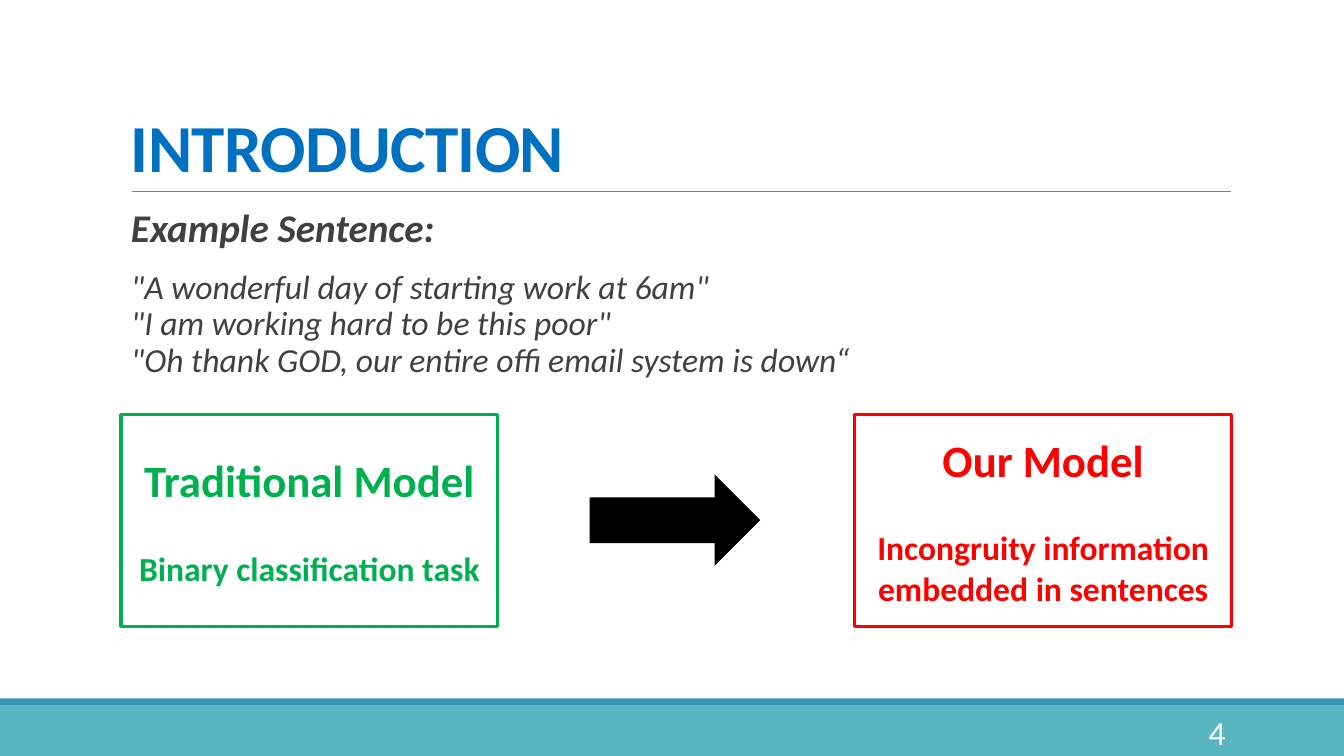
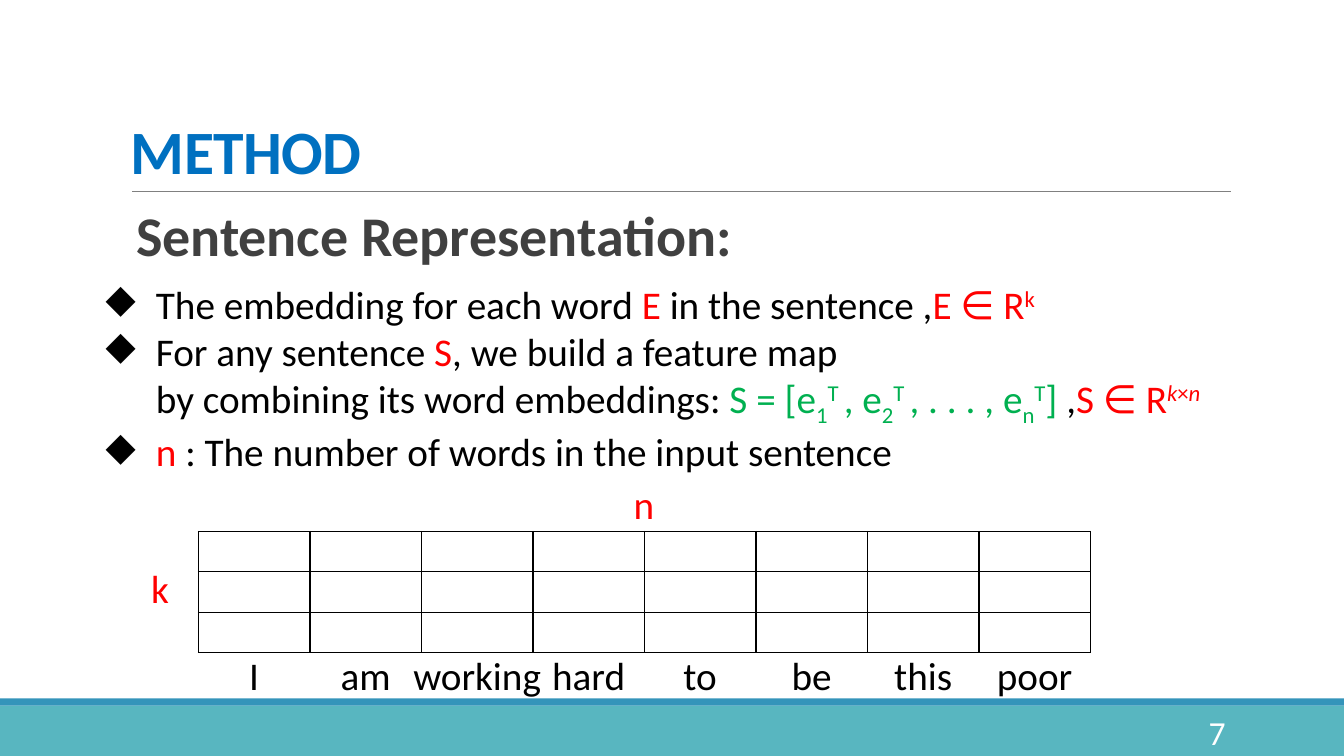
from lxml.etree import SubElement
from pptx import Presentation
from pptx.dml.color import RGBColor
from pptx.enum.shapes import MSO_CONNECTOR, MSO_SHAPE
from pptx.enum.text import MSO_ANCHOR, PP_ALIGN
from pptx.oxml.ns import qn
from pptx.util import Cm, Pt

FONT = "Calibri"
BLACK, WHITE, RED, GREEN = "000000", "FFFFFF", "FF0000", "00B050"
TITLE_BLUE, BODY_GREY, RULE_GREY = "0070C0", "404040", "808080"
TEAL, BAND_BLUE = "58B6C0", "3494BA"
SUB, SUP = -25000, 30000

PAGE_WIDTH, PAGE_HEIGHT = 33.87, 19.05
LEFT, CONTENT_WIDTH = 3.05, 27.94
INSET = 0.25

EXAMPLE_HEADING = "Example Sentence:"
EXAMPLES = (
    '"A wonderful day of starting work at 6am"\n'
    '"I am working hard to be this poor"\n'
    '"Oh thank GOD, our entire offi email system is down“'
)
MODELS = [  # left, colour, name, description
    (3.05, GREEN, "Traditional Model", "Binary classification task"),
    (21.54, RED, "Our Model", "Incongruity information embedded in sentences"),
]

REPRESENTATION_HEADING = "Sentence Representation:"
# Each span: text, then optionally colour, baseline, italic
POINTS = [
    [("The embedding for each word ",), ("E", RED), (" in the sentence ,",),
     ("E ∈ R", RED), ("k", RED, SUP)],
    [("For any sentence ",), ("S", RED),
     (", we build a feature map\nby combining its word embeddings: ",),
     ("S = [e", GREEN), ("1", GREEN, SUB), ("T ", GREEN, SUP),
     (", e", GREEN), ("2", GREEN, SUB), ("T ", GREEN, SUP),
     (", . . . , e", GREEN), ("n", GREEN, SUB), ("T", GREEN, SUP),
     ("] ", GREEN), (",",), ("S ∈ R", RED),
     ("k", RED, SUP, True), ("×", RED, SUP), ("n", RED, SUP, True)],
    [("n", RED), (" : The number of words in the input sentence",)],
]
WORDS = ["I", "am", "working", "hard", "to", "be", "this", "poor"]
AXIS_LABELS = [("k", 3.56, 14.1), ("n", 15.72, 11.99)]
GRID_LEFT, GRID_TOP, GRID_ROWS = 5.0, 13.39, 3
COLUMN_WIDTH, ROW_HEIGHT = 2.81, 1.02


def colour(code):
    return RGBColor.from_string(code)


def add_spans(para, spans):
    """Write (text, colour, baseline, italic) spans; a newline is a line break."""
    for text, code, baseline, italic in (
        (tuple(span) + (None,) * 4)[:4] for span in spans
    ):
        for index, line in enumerate(text.split("\n")):
            if index:
                para.add_line_break()
            run = para.add_run()
            run.text = line
            if code:
                run.font.color.rgb = colour(code)
            if italic:
                run.font.italic = True
            if baseline:
                run.font._element.set("baseline", str(baseline))


def add_paragraph(frame, content, size, code, bold=False, italic=False,
                  align=PP_ALIGN.LEFT, line_spacing=None, before=0, after=0):
    """Add a paragraph of plain text or of spans, using the empty first one."""
    first = frame.paragraphs[0]
    para = frame.add_paragraph() if first.runs else first
    add_spans(para, [(content,)] if isinstance(content, str) else content)
    para.alignment = align
    para.space_before, para.space_after = Pt(before), Pt(after)
    if line_spacing:
        para.line_spacing = line_spacing
    font = para.font
    font.name, font.size = FONT, Pt(size)
    font.bold, font.italic = bold, italic
    font.color.rgb = colour(code)
    return para


def add_box(page, left, top, width, height, anchor=MSO_ANCHOR.TOP, inset=INSET):
    box = page.shapes.add_textbox(Cm(left), Cm(top), Cm(width), Cm(height))
    frame = box.text_frame
    frame.word_wrap = True
    frame.vertical_anchor = anchor
    frame.margin_left = frame.margin_right = Cm(inset)
    return frame


def add_block(page, kind, left, top, width, height, fill=None, line=None):
    block = page.shapes.add_shape(kind, Cm(left), Cm(top), Cm(width), Cm(height))
    block.shadow.inherit = False
    if fill:
        block.fill.solid()
        block.fill.fore_color.rgb = colour(fill)
    else:
        block.fill.background()
    if line:
        block.line.color.rgb = colour(line)
        block.line.width = Pt(2.25)
    else:
        block.line.fill.background()
    return block


def add_page(deck, title, title_size, number):
    """Add a slide with the shared bands, rule, title and page number."""
    page = deck.slides.add_slide(deck.slide_layouts[6])
    for top, height, fill in ((17.78, 1.27, TEAL), (17.6, 0.18, BAND_BLUE)):
        add_block(page, MSO_SHAPE.RECTANGLE, 0, top, PAGE_WIDTH, height, fill)
    rule = page.shapes.add_connector(
        MSO_CONNECTOR.STRAIGHT, Cm(3.33), Cm(4.83), Cm(31.01), Cm(4.83))
    rule.line.color.rgb = colour(RULE_GREY)
    rule.line.width = Pt(0.5)
    SubElement(rule._element.spPr, qn("a:effectLst"))

    frame = add_box(page, LEFT, 0.79, CONTENT_WIDTH, 4.04, MSO_ANCHOR.BOTTOM)
    para = add_paragraph(frame, title, title_size, TITLE_BLUE, bold=True,
                         line_spacing=0.85)
    para.runs[0].font._element.set("spc", "-50")
    frame = add_box(page, 27.51, 17.93, 3.63, 1.02, MSO_ANCHOR.MIDDLE)
    add_paragraph(frame, str(number), 24, WHITE, align=PP_ALIGN.RIGHT)
    return page


def add_bullet(para):
    properties = para._p.get_or_add_pPr()
    properties.set("marL", str(Cm(1.27)))
    properties.set("indent", str(-Cm(1.27)))
    bullet_colour = SubElement(properties, qn("a:buClr"))
    SubElement(bullet_colour, qn("a:srgbClr")).set("val", BLACK)
    SubElement(properties, qn("a:buChar")).set("char", "◆")
    # The schema wants default run properties after the bullet.
    properties.append(properties.find(qn("a:defRPr")))


def style_cell(cell):
    """Give a cell thin black borders and no fill."""
    properties = cell._tc.get_or_add_tcPr()
    for side in ("lnL", "lnR", "lnT", "lnB"):
        border = SubElement(properties, qn(f"a:{side}"))
        border.set("w", str(Pt(1)))
        fill = SubElement(border, qn("a:solidFill"))
        SubElement(fill, qn("a:srgbClr")).set("val", BLACK)
    cell.fill.background()


def add_word_grid(page):
    grid = page.shapes.add_table(
        GRID_ROWS, len(WORDS), Cm(GRID_LEFT), Cm(GRID_TOP),
        Cm(COLUMN_WIDTH * len(WORDS)), Cm(ROW_HEIGHT * GRID_ROWS)).table
    grid.first_row = grid.horz_banding = False
    for cell in grid.iter_cells():
        style_cell(cell)
    overhang = 0.4
    for index, word in enumerate(WORDS):
        frame = add_box(page, GRID_LEFT + index * COLUMN_WIDTH - overhang, 16.28,
                        COLUMN_WIDTH + 2 * overhang, 1.45, inset=0)
        add_paragraph(frame, word, 28, BLACK, align=PP_ALIGN.CENTER)


def add_introduction(deck):
    page = add_page(deck, "INTRODUCTION", 48, 4)
    frame = add_box(page, LEFT, 5.13, CONTENT_WIDTH, 5.1)
    for text, size, bold in ((EXAMPLE_HEADING, 28, True), (EXAMPLES, 24, False)):
        add_paragraph(frame, text, size, BODY_GREY, bold, italic=True,
                      line_spacing=0.9, before=12, after=2)
    for left, code, name, description in MODELS:
        card = add_block(page, MSO_SHAPE.RECTANGLE, left, 10.45, 9.5, 5.33, line=code)
        frame = card.text_frame
        frame.word_wrap = True
        frame.vertical_anchor = MSO_ANCHOR.MIDDLE
        for text, size, before in ((name, 32, 0), (description, 24, 29)):
            add_paragraph(frame, text, size, code, bold=True,
                          align=PP_ALIGN.CENTER, before=before)
    add_block(page, MSO_SHAPE.RIGHT_ARROW, 14.86, 11.96, 4.3, 2.3, BLACK)


def add_method(deck):
    page = add_page(deck, "METHOD", 44, 7)
    frame = add_box(page, LEFT, 5.13, CONTENT_WIDTH, 2.24, inset=0.38)
    add_paragraph(frame, REPRESENTATION_HEADING, 40, BODY_GREY, bold=True,
                  line_spacing=0.9)
    frame = add_box(page, 2.41, 6.93, 29.24, 5.2)
    for spans in POINTS:
        add_bullet(add_paragraph(frame, spans, 28, BLACK))
    add_word_grid(page)
    for label, left, top in AXIS_LABELS:
        frame = add_box(page, left, top, 1.45, 1.45)
        add_paragraph(frame, label, 28, RED)


def main():
    deck = Presentation()
    deck.slide_width, deck.slide_height = Cm(PAGE_WIDTH), Cm(PAGE_HEIGHT)
    add_introduction(deck)
    add_method(deck)
    deck.save("out.pptx")


if __name__ == "__main__":
    main()
